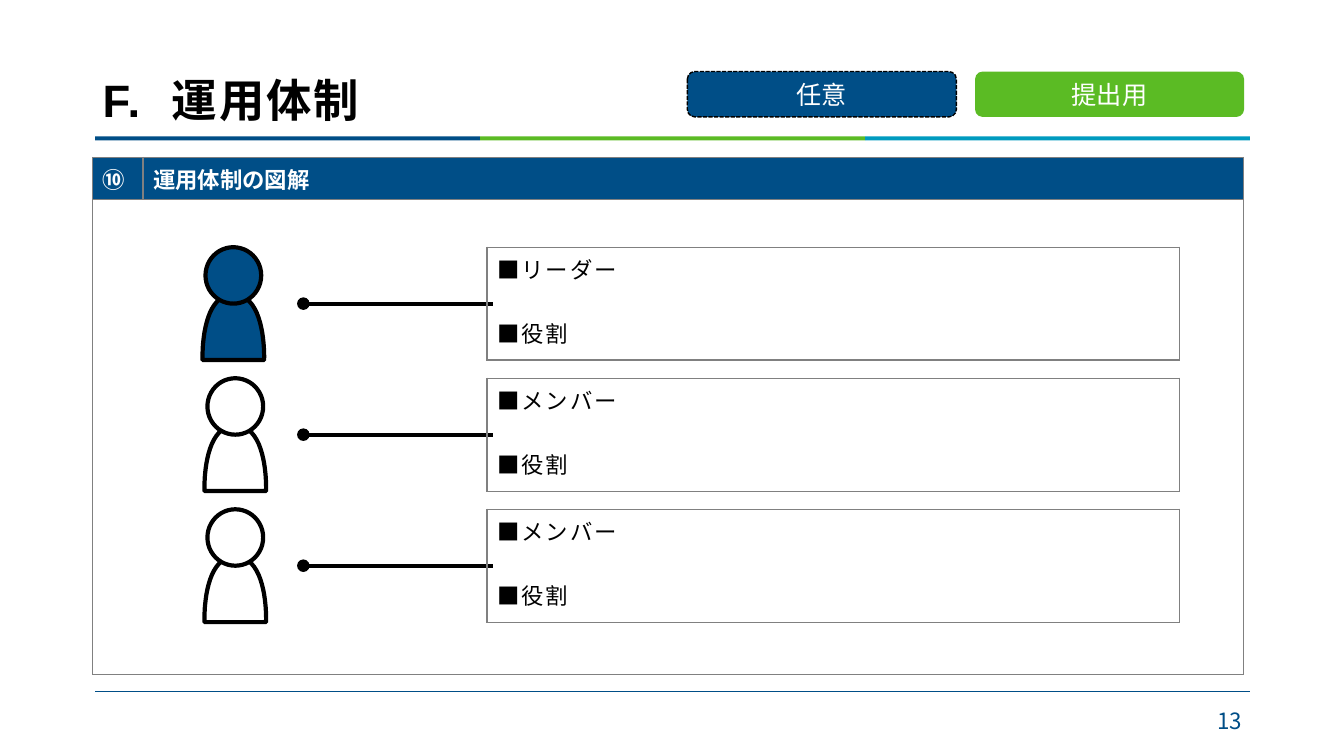
"""Build the operating structure slide with a leader and two members."""
from lxml import etree
from pptx import Presentation
from pptx.dml.color import RGBColor
from pptx.enum.dml import MSO_LINE
from pptx.enum.shapes import MSO_CONNECTOR, MSO_SHAPE
from pptx.enum.text import MSO_ANCHOR, MSO_AUTO_SIZE, PP_ALIGN
from pptx.oxml.ns import qn
from pptx.util import Pt

NAVY = RGBColor(0x00, 0x4E, 0x87)
GREEN = RGBColor(0x5B, 0xBB, 0x24)
TEAL = RGBColor(0x00, 0x9B, 0xBF)
GRAY = RGBColor(0x80, 0x80, 0x80)
BLACK = RGBColor(0x00, 0x00, 0x00)
WHITE = RGBColor(0xFF, 0xFF, 0xFF)
RECTANGLE, ROUNDED, OVAL = MSO_SHAPE.RECTANGLE, MSO_SHAPE.ROUNDED_RECTANGLE, MSO_SHAPE.OVAL
STRAIGHT = MSO_CONNECTOR.STRAIGHT
SYS_DASH = MSO_LINE.SQUARE_DOT
MIDDLE = MSO_ANCHOR.MIDDLE
NO_AUTOFIT = MSO_AUTO_SIZE.NONE
LEFT, CENTER, RIGHT = PP_ALIGN.LEFT, PP_ALIGN.CENTER, PP_ALIGN.RIGHT
JAPANESE_FONT = "Noto Sans CJK JP"


def add_run(paragraph, text, size, color, bold=False, font=JAPANESE_FONT, spacing=0):
    run = paragraph.add_run()
    run.text = text
    run.font.size = Pt(size)
    run.font.bold = bold
    run.font.name = font
    run.font.color.rgb = color
    properties = run.font._element
    etree.SubElement(properties, qn("a:ea"), typeface=JAPANESE_FONT)
    properties.set("spc", str(int(spacing * 100)))


def style_cell(cell, fill=None):
    properties = cell._tc.get_or_add_tcPr()
    for side in ("a:lnL", "a:lnR", "a:lnT", "a:lnB"):
        border = etree.SubElement(properties, qn(side), w=str(Pt(1)))
        solid = etree.SubElement(border, qn("a:solidFill"))
        etree.SubElement(solid, qn("a:srgbClr"), val=str(GRAY))
    if fill is None:
        cell.fill.background()
    else:
        cell.fill.solid()
        cell.fill.fore_color.rgb = fill


presentation = Presentation()
presentation.slide_width = Pt(960)
presentation.slide_height = Pt(540)
slide = presentation.slides.add_slide(presentation.slide_layouts[5])
shapes = slide.shapes

for index, color in enumerate((NAVY, GREEN, TEAL)):
    stripe = shapes.add_shape(RECTANGLE, Pt(67.9 + 275 * index), Pt(97.4), Pt(275), Pt(2.9))
    stripe.shadow.inherit = False
    stripe.fill.solid()
    stripe.fill.fore_color.rgb = color
    stripe.line.fill.background()

footer_rule = shapes.add_connector(STRAIGHT, Pt(67.9), Pt(493.8), Pt(892.8), Pt(493.8))
footer_rule.line.color.rgb = NAVY
footer_rule.line.width = Pt(0.5)
connectors = [footer_rule]

title = shapes.title
title.left, title.top, title.width, title.height = Pt(66.2), Pt(28.8), Pt(828), Pt(65.5)
title.text_frame.auto_size = NO_AUTOFIT
title.text_frame.vertical_anchor = MIDDLE
heading = title.text_frame.paragraphs[0]
heading.alignment = LEFT
heading.line_spacing = 1.5
for text, spacing in (("F.", 1.5), (" ", 12), ("運用体制", 1.5)):
    add_run(heading, text, 32.4, BLACK, True, "Arial", spacing)

page_number = shapes.add_textbox(Pt(678.2), Pt(500.4), Pt(216), Pt(28.8)).text_frame
page_number.word_wrap = True
page_number.vertical_anchor = MIDDLE
page_number.paragraphs[0].alignment = RIGHT
add_run(page_number.paragraphs[0], "13", 16, NAVY)

diagram_table = shapes.add_table(2, 2, Pt(66.2), Pt(112.5), Pt(822.2), Pt(369.4)).table
diagram_table.first_row = diagram_table.horz_banding = False
diagram_table.columns[0].width, diagram_table.columns[1].width = Pt(36), Pt(786.2)
diagram_table.rows[0].height, diagram_table.rows[1].height = Pt(29.8), Pt(339.6)
for column, text in enumerate(("⑩", "運用体制の図解")):
    header = diagram_table.cell(0, column)
    style_cell(header, NAVY)
    header.margin_top = header.margin_bottom = Pt(3)
    header.vertical_anchor = MIDDLE
    add_run(header.text_frame.paragraphs[0], text, 16, WHITE, True)
    style_cell(diagram_table.cell(1, column))
diagram_table.cell(1, 0).merge(diagram_table.cell(1, 1))

for text, left, color, dashed in (("提出用", 696.5, GREEN, False), ("任意", 491, NAVY, True)):
    badge = shapes.add_shape(ROUNDED, Pt(left), Pt(51.1), Pt(192.2), Pt(32.4))
    badge.shadow.inherit = False
    badge.fill.solid()
    badge.fill.fore_color.rgb = color
    if dashed:
        badge.line.color.rgb = BLACK
        badge.line.width = Pt(1)
        badge.line.dash_style = SYS_DASH
    else:
        badge.line.fill.background()
    badge.text_frame.vertical_anchor = MIDDLE
    badge.text_frame.paragraphs[0].alignment = CENTER
    add_run(badge.text_frame.paragraphs[0], text, 18, WHITE)

shoulder = []
for step in range(21):
    t = step / 20
    half_width = 22 * (1 - t) ** 3 + 66 * t * (1 - t) ** 2 + 71.4 * t ** 2 * (1 - t)
    rise = 46.8 * (3 * t ** 2 - 2 * t ** 3)
    shoulder.append((half_width, rise))
torso_outline = shoulder + [(-half_width, rise) for half_width, rise in shoulder[-2::-1]]

people = (("■リーダー", NAVY, 166.7), ("■メンバー", WHITE, 168.1), ("■メンバー", WHITE, 168.1))
for index, (role, color, center) in enumerate(people):
    top = 176.6 + 93.6 * index
    person = shapes.add_group_shape().shapes
    points = [(Pt(center + x), Pt(top + 80.6 - y)) for x, y in torso_outline]
    builder = person.build_freeform(*points[0])
    builder.add_line_segments(points[1:], close=True)
    torso = builder.convert_to_shape()
    head = person.add_shape(OVAL, Pt(center - 19.9), Pt(top), Pt(39.8), Pt(40.3))
    for part in (torso, head):
        part.shadow.inherit = False
        part.fill.solid()
        part.fill.fore_color.rgb = color
        part.line.color.rgb = BLACK
        part.line.width = Pt(3)

    lead = shapes.add_connector(STRAIGHT, Pt(216.7), Pt(top + 40.3), Pt(352.1), Pt(top + 40.3))
    lead.line.color.rgb = BLACK
    lead.line.width = Pt(3)
    etree.SubElement(lead.line._get_or_add_ln(), qn("a:headEnd"), type="oval")
    connectors.append(lead)

    role_table = shapes.add_table(1, 1, Pt(347.8), Pt(top), Pt(494.6), Pt(80.6)).table
    role_table.first_row = role_table.horz_banding = False
    role_cell = role_table.cell(0, 0)
    style_cell(role_cell)
    add_run(role_cell.text_frame.paragraphs[0], role, 16, BLACK, spacing=1.5)
    duty = role_cell.text_frame.add_paragraph()
    duty.space_before = Pt(23)
    add_run(duty, "■役割", 16, BLACK, spacing=1.5)

for connector in connectors:
    etree.SubElement(connector._element.spPr, qn("a:effectLst"))

presentation.save("out.pptx")
